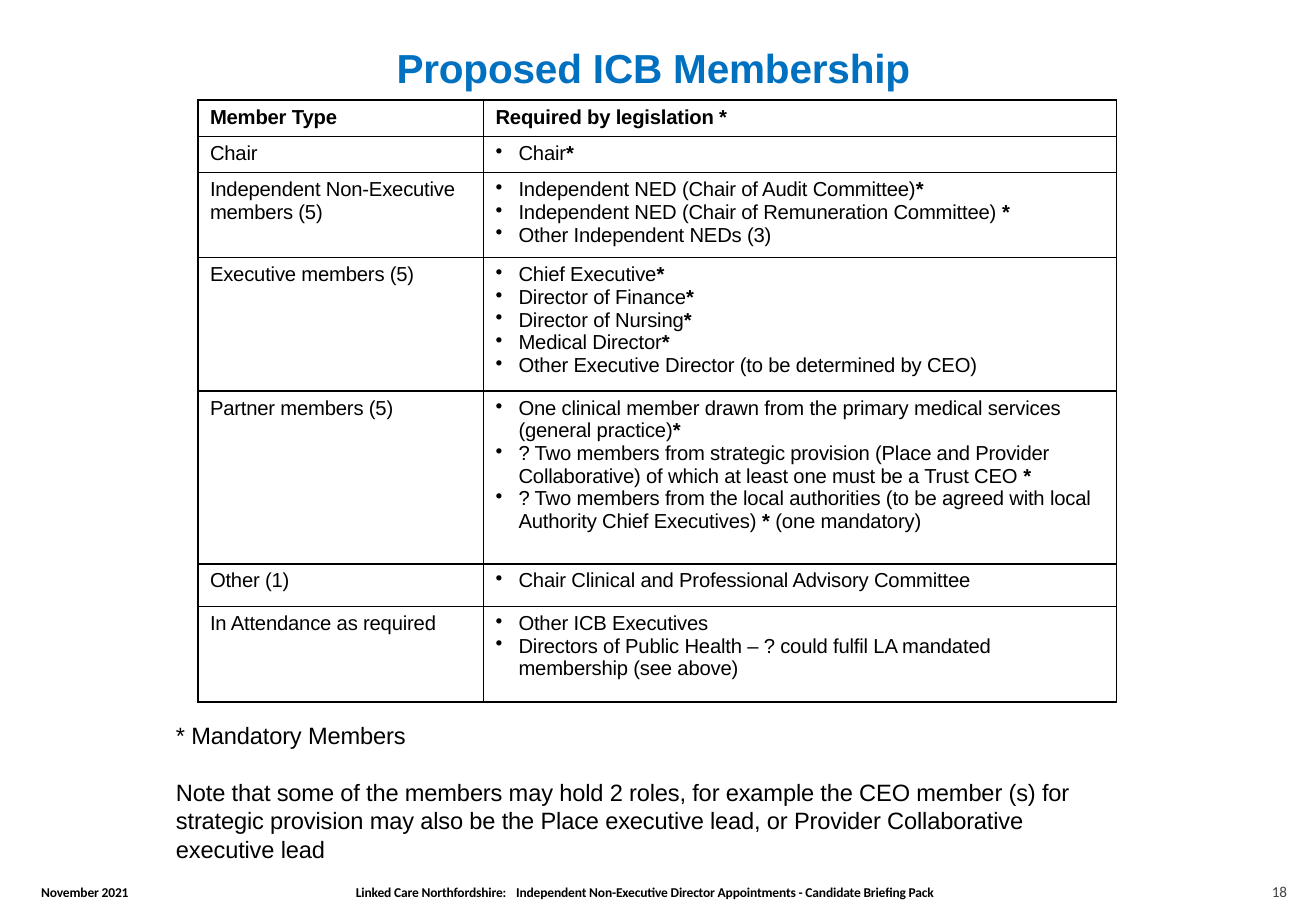
from dataclasses import dataclass

from pptx import Presentation
from pptx.dml.color import RGBColor
from pptx.enum.text import MSO_ANCHOR
from pptx.oxml import parse_xml
from pptx.oxml.ns import nsdecls
from pptx.slide import Slide
from pptx.table import Table, _Cell
from pptx.text.text import _Paragraph
from pptx.util import Cm, Pt

BLACK = RGBColor(0, 0, 0)
WHITE = RGBColor(255, 255, 255)
BLUE = RGBColor(0, 0x70, 0xC0)
GREY = RGBColor(0x43, 0x43, 0x43)
INDENT = Cm(0.48)


@dataclass
class Label:
    left: float
    top: float
    width: float
    height: float
    lines: list[str]
    size: float
    font: str = "Arial"
    color: RGBColor = BLACK
    bold: bool = False
    pitch: float | None = None
    gap: float = 0
    tab: float | None = None


@dataclass
class Member:
    kind: str
    roles: list[str]
    height: float
    head: bool = False


FOOTER = dict(size=8, font="Calibri", bold=True, pitch=8.6)

LABELS = [
    Label(8.29, 0.9, 11.5, 1, ["Proposed ICB Membership"], 24, color=BLUE, bold=True),
    Label(26.59, 18.49, 0.6, 0.38, ["18"], 9, "Calibri", GREY, pitch=9.6),
    Label(0.86, 18.52, 2.2, 0.36, ["November 2021"], **FOOTER),
    Label(7.44, 18.52, 12.8, 0.36, [
        "Linked Care Northfordshire:\tIndependent Non-Executive Director Appointments"
        " - Candidate Briefing Pack"], tab=3.35, **FOOTER),
    Label(3.68, 15.07, 19.4, 3, [
        "* Mandatory Members",
        "Note that some of the members may hold 2 roles, for example the CEO member (s) for "
        "strategic provision may also be the Place executive lead, or Provider Collaborative "
        "executive lead"], 14, gap=17),
]

MEMBERS = [
    Member("Member Type", ["Required by legislation *"], 0.76, head=True),
    Member("Chair", ["Chair*"], 0.76),
    Member("Independent Non-Executive members (5)", [
        "Independent NED (Chair of Audit Committee)*",
        "Independent NED (Chair of Remuneration Committee) *",
        "Other Independent NEDs (3)"], 1.78),
    Member("Executive members (5)", [
        "Chief Executive*",
        "Director of Finance*",
        "Director of Nursing*",
        "Medical Director*",
        "Other Executive Director (to be determined by CEO)"], 2.79),
    Member("Partner members (5)", [
        "One clinical member drawn from the primary medical services (general practice)*",
        "? Two members from strategic provision (Place and Provider Collaborative) "
        "of which at least one must be a Trust CEO *",
        "? Two members from the local authorities (to be agreed with local "
        "Authority Chief Executives) * (one mandatory)"], 3.61),
    Member("Other (1)", ["Chair Clinical and Professional Advisory Committee"], 0.89),
    Member("In Attendance as required", [
        "Other ICB Executives",
        "Directors of Public Health – ? could fulfil LA mandated membership (see above)"], 2),
]


def write(para: _Paragraph, text: str, *, size: float, font: str = "Arial",
          color: RGBColor = BLACK, bold: bool = False, stars: bool = False) -> None:
    parts = text.partition("*") if stars else (text,)
    for part in filter(None, parts):
        run = para.add_run()
        run.text = part
        run.font.size = Pt(size)
        run.font.name = font
        run.font.color.rgb = color
        run.font.bold = bold or (stars and part == "*")
        run._r.get_or_add_rPr().set("spc", "-10")


def add_tab(para: _Paragraph, place: int) -> None:
    para._p.get_or_add_pPr().append(parse_xml(
        f'<a:tabLst {nsdecls("a")}><a:tab pos="{place}" algn="l"/></a:tabLst>'))


def add_bullet(para: _Paragraph) -> None:
    props = para._p.get_or_add_pPr()
    props.set("marL", str(INDENT))
    props.set("indent", str(-INDENT))
    props.append(parse_xml(f'<a:buChar {nsdecls("a")} char="•"/>'))


def add_label(slide: Slide, label: Label) -> None:
    box = slide.shapes.add_textbox(
        Cm(label.left), Cm(label.top), Cm(label.width), Cm(label.height))
    frame = box.text_frame
    frame.word_wrap = True
    frame.margin_left = frame.margin_right = frame.margin_top = frame.margin_bottom = 0
    for index, line in enumerate(label.lines):
        para = frame.add_paragraph() if index else frame.paragraphs[0]
        if label.pitch:
            para.line_spacing = Pt(label.pitch)
        if index:
            para.space_before = Pt(label.gap)
        if label.tab:
            add_tab(para, Cm(label.tab))
        write(para, line, size=label.size, font=label.font,
              color=label.color, bold=label.bold)


def frame_cell(cell: _Cell) -> None:
    props = cell._tc.get_or_add_tcPr()
    for side in "LRTB":
        props.append(parse_xml(
            f'<a:ln{side} {nsdecls("a")} w="{Pt(1)}"><a:solidFill>'
            f'<a:srgbClr val="{BLACK}"/></a:solidFill></a:ln{side}>'))
    cell.fill.solid()
    cell.fill.fore_color.rgb = WHITE


def fill_cell(cell: _Cell, lines: list[str], head: bool, bullets: bool) -> None:
    frame_cell(cell)
    cell.vertical_anchor = MSO_ANCHOR.TOP
    cell.margin_left = cell.margin_right = Cm(0.25)
    cell.margin_top = Cm(0.12)
    cell.margin_bottom = 0
    for index, line in enumerate(lines):
        para = cell.text_frame.add_paragraph() if index else cell.text_frame.paragraphs[0]
        if bullets:
            add_bullet(para)
        write(para, line, size=12, bold=head, stars=bullets)


def add_grid(slide: Slide) -> None:
    total = sum(member.height for member in MEMBERS)
    grid: Table = slide.shapes.add_table(
        len(MEMBERS), 2, Cm(4.14), Cm(2.09), Cm(19.2), Cm(total)).table
    grid.first_row = grid.horz_banding = False
    for column, width in zip(grid.columns, (5.97, 13.23)):
        column.width = Cm(width)
    for index, member in enumerate(MEMBERS):
        grid.rows[index].height = Cm(member.height)
        fill_cell(grid.cell(index, 0), [member.kind], member.head, False)
        fill_cell(grid.cell(index, 1), member.roles, member.head, not member.head)


def main() -> None:
    deck = Presentation()
    deck.slide_width, deck.slide_height = Cm(27.51), Cm(19.05)
    slide = deck.slides.add_slide(deck.slide_layouts[6])
    add_grid(slide)
    for label in LABELS:
        add_label(slide, label)
    deck.save("out.pptx")


if __name__ == "__main__":
    main()
